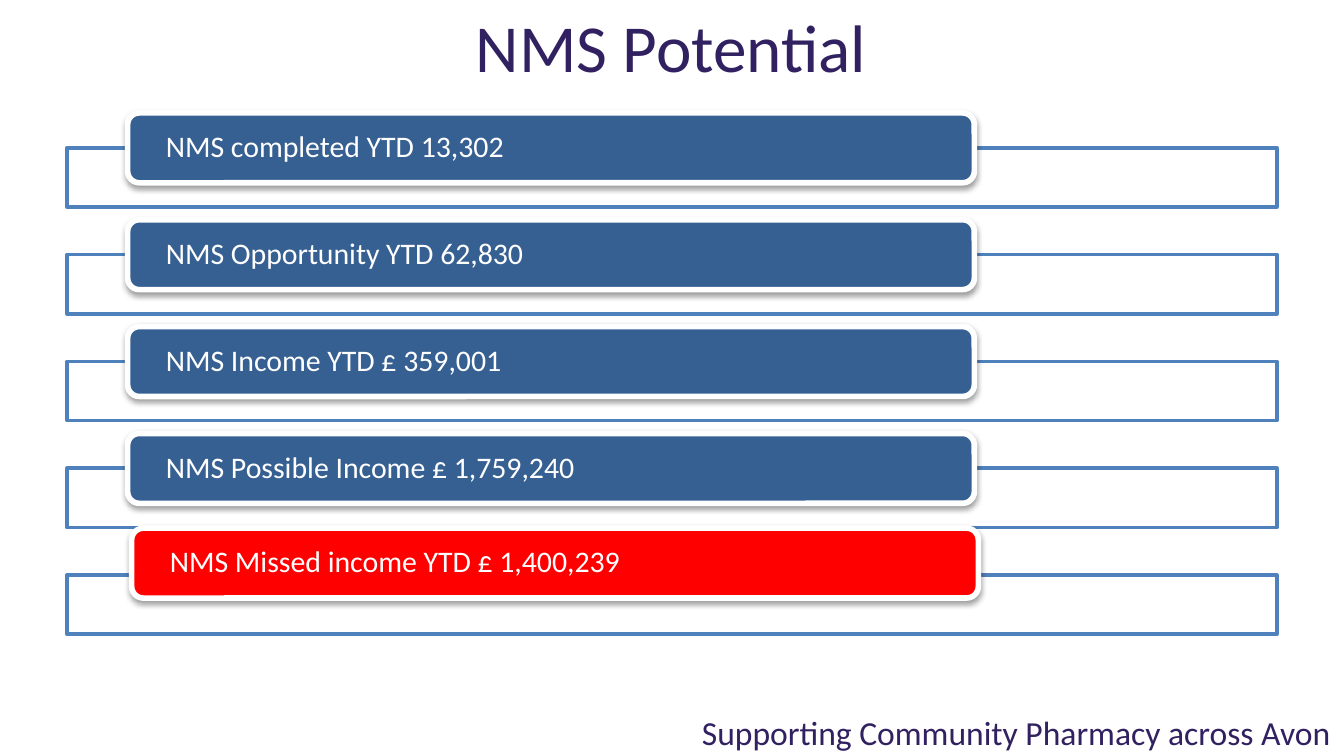
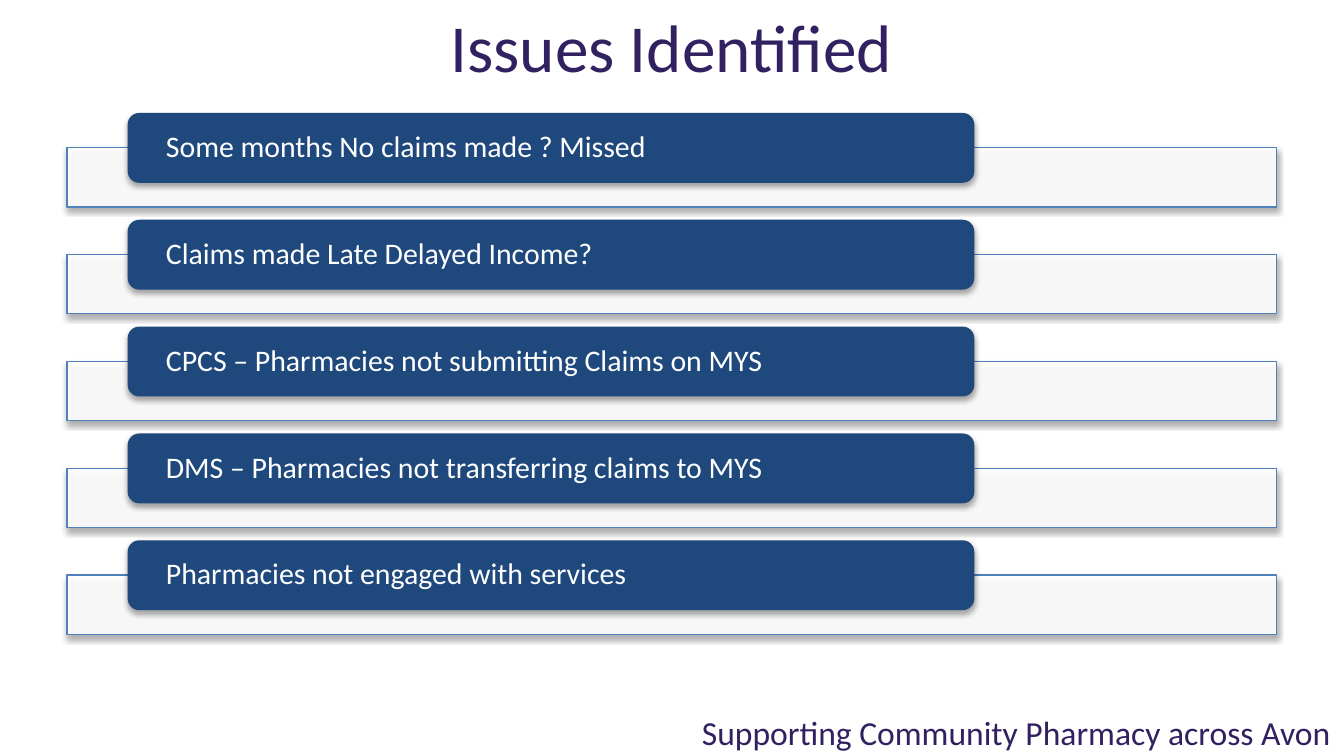
from lxml.etree import SubElement
from pptx import Presentation
from pptx.dml.color import RGBColor
from pptx.enum.shapes import MSO_SHAPE
from pptx.enum.text import MSO_ANCHOR, PP_ALIGN
from pptx.oxml.ns import qn
from pptx.util import Inches, Pt

WHITE = RGBColor(0xFF, 0xFF, 0xFF)
PURPLE = RGBColor(0x31, 0x21, 0x60)
FRAME_BLUE = RGBColor(0x4F, 0x81, 0xBD)
MID_BLUE = RGBColor(0x37, 0x60, 0x92)
DARK_BLUE = RGBColor(0x1F, 0x49, 0x7D)
RED = RGBColor(0xFF, 0x00, 0x00)

WIDTH = Inches(10)
HEIGHT = WIDTH * 9 // 16
MARGIN = WIDTH * 0.05
FIRST_ROW = Inches(1.1)
ROW_PITCH = Inches(3.18) / 4
BAR_SIZE = (WIDTH - 2 * MARGIN, Inches(0.44))
LABEL_SIZE = (BAR_SIZE[0] * 0.7, Inches(0.52))
LABEL_LEFT = MARGIN * 1.9
LABEL_RISE = Inches(0.26)
NO_NUDGE = (0, 0)

FOOTER = "Supporting Community Pharmacy across Avon"
TITLE_FORMAT = {"size": Pt(36), "name": "Calibri", "color": PURPLE}
FOOTER_FORMAT = {"size": Pt(18), "name": "Calibri", "color": PURPLE}
LABEL_FORMAT = {"size": Pt(16), "name": "Calibri", "color": WHITE}

SLIDES = [
    {
        "title": "NMS Potential",
        "labels": [
            ("NMS completed YTD 13,302", MID_BLUE, NO_NUDGE),
            ("NMS Opportunity YTD 62,830", MID_BLUE, NO_NUDGE),
            ("NMS Income YTD £ 359,001", MID_BLUE, NO_NUDGE),
            ("NMS Possible Income £ 1,759,240", MID_BLUE, NO_NUDGE),
            ("NMS Missed income YTD £ 1,400,239", RED, (Inches(0.03), Inches(-0.09))),
        ],
        "bar_line": 2,
        "label_line": 3,
        "bar_shadow": None,
        "label_shadow": (38, 1.6),
    },
    {
        "title": "Issues Identified",
        "labels": [
            ("Some months No claims made ? Missed", DARK_BLUE, NO_NUDGE),
            ("Claims made Late Delayed Income?", DARK_BLUE, NO_NUDGE),
            ("CPCS – Pharmacies not submitting Claims on MYS", DARK_BLUE, NO_NUDGE),
            ("DMS – Pharmacies not transferring claims to MYS", DARK_BLUE, NO_NUDGE),
            ("Pharmacies not engaged with services", DARK_BLUE, NO_NUDGE),
        ],
        "bar_line": 0.75,
        "label_line": 0,
        "bar_shadow": (35, 1.8),
        "label_shadow": (35, 1.8),
    },
]


def add_panel(page, kind, corner, size, fill, line, line_width, shadow):
    """Add a filled shape; shadow is (opacity in percent, distance in points) or None."""
    panel = page.shapes.add_shape(kind, *map(int, (*corner, *size)))
    panel.shadow.inherit = False
    panel.fill.solid()
    panel.fill.fore_color.rgb = fill
    if line_width:
        panel.line.color.rgb = line
        panel.line.width = Pt(line_width)
    else:
        panel.line.fill.background()
    if shadow:
        opacity, distance = shadow
        effects = panel._element.spPr.find(qn("a:effectLst"))
        outer = SubElement(effects, qn("a:outerShdw"), blurRad=str(Pt(3.1)),
                           dist=str(Pt(distance)), dir="5400000", rotWithShape="0")
        color = SubElement(outer, qn("a:srgbClr"), val="000000")
        SubElement(color, qn("a:alpha"), val=str(opacity * 1000))
    return panel


def write_text(box, text, align, spacing, text_format):
    frame = box.text_frame
    frame.word_wrap = True
    frame.vertical_anchor = MSO_ANCHOR.MIDDLE
    para = frame.paragraphs[0]
    para.alignment = align
    para.line_spacing = spacing
    span = para.add_run()
    span.text = text
    for name, value in text_format.items():
        if name == "color":
            span.font.color.rgb = value
        else:
            setattr(span.font, name, value)


deck = Presentation()
deck.slide_width, deck.slide_height = WIDTH, HEIGHT

for content in SLIDES:
    page = deck.slides.add_slide(deck.slide_layouts[6])

    footer = page.shapes.add_textbox(Inches(2.7), Inches(5.3), Inches(7.3), Inches(0.3))
    write_text(footer, FOOTER, PP_ALIGN.RIGHT, 1.0, FOOTER_FORMAT)
    title = page.shapes.add_textbox(Inches(1.38), Inches(0.05), Inches(7.23), Inches(0.66))
    write_text(title, content["title"], PP_ALIGN.CENTER, 0.9, TITLE_FORMAT)

    for row, (text, color, (shift_x, shift_y)) in enumerate(content["labels"]):
        top = FIRST_ROW + row * ROW_PITCH

        bar = add_panel(page, MSO_SHAPE.RECTANGLE, (MARGIN, top), BAR_SIZE, WHITE,
                        FRAME_BLUE, content["bar_line"], content["bar_shadow"])
        bar_color = bar._element.spPr.find(qn("a:solidFill")).find(qn("a:srgbClr"))
        SubElement(bar_color, qn("a:alpha"), val="90000")

        corner = (LABEL_LEFT + shift_x, top - LABEL_RISE + shift_y)
        label = add_panel(page, MSO_SHAPE.ROUNDED_RECTANGLE, corner, LABEL_SIZE, color,
                          WHITE, content["label_line"], content["label_shadow"])
        insets = {"margin_left": Inches(0.26), "margin_right": Inches(0.26),
                  "margin_top": 0, "margin_bottom": 0}
        for name, value in insets.items():
            setattr(label.text_frame, name, value)
        write_text(label, text, PP_ALIGN.LEFT, 0.9, LABEL_FORMAT)

deck.save("out.pptx")
